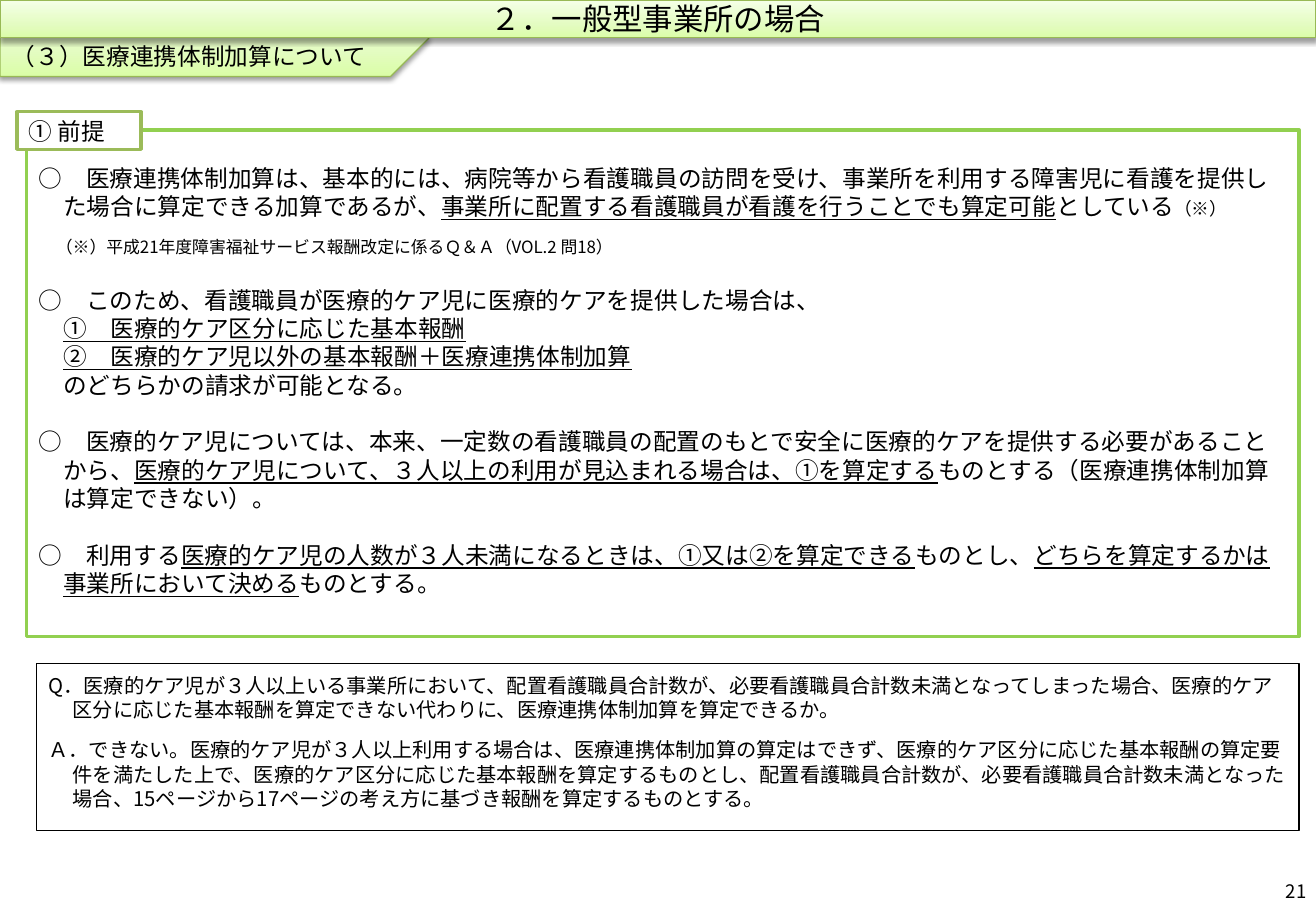
from dataclasses import dataclass

from lxml import etree
from pptx import Presentation
from pptx.dml.color import RGBColor
from pptx.enum.shapes import MSO_SHAPE
from pptx.enum.text import MSO_ANCHOR, MSO_AUTO_SIZE, PP_ALIGN
from pptx.oxml.ns import qn
from pptx.util import Inches, Pt

RECT, PLATE = MSO_SHAPE.RECTANGLE, MSO_SHAPE.PENTAGON
TOP, MID, LOW = MSO_ANCHOR.TOP, MSO_ANCHOR.MIDDLE, MSO_ANCHOR.BOTTOM
LEFT, CENTER, RIGHT = PP_ALIGN.LEFT, PP_ALIGN.CENTER, PP_ALIGN.RIGHT
FIXED = MSO_AUTO_SIZE.NONE


@dataclass(frozen=True)
class Theme:
    """Hold the colours, font and type sizes."""
    face: str = "Noto Sans CJK JP"
    ink: str = "000000"
    white: str = "FFFFFF"
    frame: str = "92D050"
    label: str = "9BBB59"
    edge: str = "98B955"
    fade: tuple = ((0, "DAFDA7"), (35, "E4FCC2"), (100, "F5FFE7"))
    title: float = 18
    text: float = 14
    answer: float = 12
    page: float = 11
    mark: float = 10.5
    note: float = 10
    pitch: float = 1.2


THEME = Theme()
HANG, FLUSH, NOTE = (0.2, -0.2), (0.2, 0), (0.14, 0)

POINTS = (
    ("○　医療連携体制加算は、基本的には、病院等から看護職員の訪問を受け、事業所を利用する障害児に看護を提供した場合に算定できる加算であるが、"
     "|事業所に配置する看護職員が看護を行うことでも算定可能|としている", HANG, THEME.text, 0),
    ("（※）平成21年度障害福祉サービス報酬改定に係るＱ＆Ａ（VOL.2 問18）", NOTE, THEME.note, 9.6),
    ("○　このため、看護職員が医療的ケア児に医療的ケアを提供した場合は、", HANG, THEME.text, 16.8),
    ("|①　医療的ケア区分に応じた基本報酬", FLUSH, THEME.text, 0),
    ("|②　医療的ケア児以外の基本報酬＋医療連携体制加算", FLUSH, THEME.text, 0),
    ("のどちらかの請求が可能となる。", FLUSH, THEME.text, 0),
    ("○　医療的ケア児については、本来、一定数の看護職員の配置のもとで安全に医療的ケアを提供する必要があることから、"
     "|医療的ケア児について、３人以上の利用が見込まれる場合は、①を算定する|ものとする（医療連携体制加算は算定できない）。",
     HANG, THEME.text, 16.8),
    ("○　利用する|医療的ケア児の人数が３人未満になるときは、①又は②を算定できる|ものとし、"
     "|どちらを算定するかは事業所において決める|ものとする。", HANG, THEME.text, 16.8),
)
ANSWERS = (
    ("Q．医療的ケア児が３人以上いる事業所において、配置看護職員合計数が、必要看護職員合計数未満となってしまった場合、"
     "医療的ケア区分に応じた基本報酬を算定できない代わりに、医療連携体制加算を算定できるか。", HANG, THEME.answer, 0),
    ("Ａ．できない。医療的ケア児が３人以上利用する場合は、医療連携体制加算の算定はできず、"
     "医療的ケア区分に応じた基本報酬の算定要件を満たした上で、医療的ケア区分に応じた基本報酬を算定するものとし、"
     "配置看護職員合計数が、必要看護職員合計数未満となった場合、15ページから17ページの考え方に基づき報酬を算定するものとする。",
     HANG, THEME.answer, 9.6),
)


def place(shape, left, top, width, height):
    """Move and size a shape."""
    shape.left, shape.top = Inches(left), Inches(top)
    shape.width, shape.height = Inches(width), Inches(height)


def border(shape, color, width):
    """Draw the outline of a shape."""
    shape.line.color.rgb = RGBColor.from_string(color)
    shape.line.width = Pt(width)


def glow(shape):
    """Give a banner its green fade, outline and shadow."""
    shape.fill.gradient()
    shape.fill.gradient_angle = 90
    props = shape._element.spPr
    stops = props.find(".//" + qn("a:gsLst"))
    stops.clear()
    for pos, color in THEME.fade:
        stop = etree.SubElement(stops, qn("a:gs"), pos=str(pos * 1000))
        etree.SubElement(stop, qn("a:srgbClr"), val=color)
    border(shape, THEME.edge, 0.75)
    shape.shadow.inherit = False
    shade = etree.SubElement(
        props.find(qn("a:effectLst")), qn("a:outerShdw"), blurRad=str(Pt(3.1)),
        dist=str(Pt(1.6)), dir="5400000", rotWithShape="0")
    black = etree.SubElement(shade, qn("a:srgbClr"), val=THEME.ink)
    etree.SubElement(black, qn("a:alpha"), val="38000")


def style(para, size, align=LEFT, indent=(0, 0), before=0):
    """Set the indents, spacing and font of a paragraph."""
    props = para._p.get_or_add_pPr()
    props.set("marL", str(Inches(indent[0])))
    props.set("indent", str(Inches(indent[1])))
    para.alignment = align
    para.line_spacing = Pt(size * THEME.pitch)
    para.space_before = Pt(before)
    etree.SubElement(props, qn("a:buNone"))
    font = para.font
    font.name, font.size = THEME.face, Pt(size)
    font.color.rgb = RGBColor.from_string(THEME.ink)
    etree.SubElement(props.find(qn("a:defRPr")), qn("a:ea"), typeface=THEME.face)


def setup(shape, anchor, top=0.05, low=0.05):
    """Set the insets and anchor of a text frame."""
    frame = shape.text_frame
    frame.word_wrap, frame.auto_size = True, FIXED
    frame.vertical_anchor = anchor
    frame.margin_left = frame.margin_right = Inches(0.1)
    frame.margin_top, frame.margin_bottom = Inches(top), Inches(low)
    return frame


def write(shape, text, size, align=LEFT, anchor=MID):
    """Write one line of text in a shape."""
    para = setup(shape, anchor).paragraphs[0]
    style(para, size, align)
    para.add_run().text = text


def fill_list(shape, items, top):
    """Write a list, underlining every second part between bars."""
    frame = setup(shape, TOP, top, 0.08)
    for i, (text, indent, size, before) in enumerate(items):
        para = frame.add_paragraph() if i else frame.paragraphs[0]
        style(para, size, LEFT, indent, before)
        for j, part in enumerate(text.split("|")):
            if part:
                run = para.add_run()
                run.text = part
                if j % 2:
                    run.font.underline = True
    return frame


def add_box(slide, kind, *area):
    """Add a preset shape without a shadow."""
    shape = slide.shapes.add_shape(kind, *map(Inches, area))
    shape.shadow.inherit = False
    return shape


def main():
    """Build and save the slide."""
    deck = Presentation()
    deck.slide_width, deck.slide_height = Inches(10.83), Inches(7.5)
    slide = deck.slides.add_slide(deck.slide_layouts[1])
    title, body = slide.shapes.title, slide.placeholders[1]

    place(body, 0.22, 1.07, 10.47, 4.17)
    border(body, THEME.frame, 2)
    frame = fill_list(body, POINTS, 0.28)
    mark = frame.paragraphs[0].add_run()
    mark.text, mark.font.size = "（※）", Pt(THEME.mark)

    page = slide.shapes.add_textbox(*map(Inches, (8.32, 7.14, 2.53, 0.4)))
    write(page, "21", THEME.page, RIGHT)

    tab = add_box(slide, PLATE, 0, 0, 3.53, 0.63)
    glow(tab)
    write(tab, "（３）医療連携体制加算について", THEME.text, anchor=LOW)

    place(title, 0, 0, 10.83, 0.31)
    glow(title)
    write(title, "２．一般型事業所の場合", THEME.title, CENTER)
    slide.shapes._spTree.append(title._element)

    label = add_box(slide, RECT, 0.14, 0.92, 1.02, 0.31)
    label.fill.solid()
    label.fill.fore_color.rgb = RGBColor.from_string(THEME.white)
    border(label, THEME.label, 2)
    write(label, "① 前提", THEME.text)

    answer = add_box(slide, RECT, 0.3, 5.46, 10.39, 1.38)
    answer.fill.background()
    border(answer, THEME.ink, 0.75)
    fill_list(answer, ANSWERS, 0.08)
    deck.save("out.pptx")


if __name__ == "__main__":
    main()
